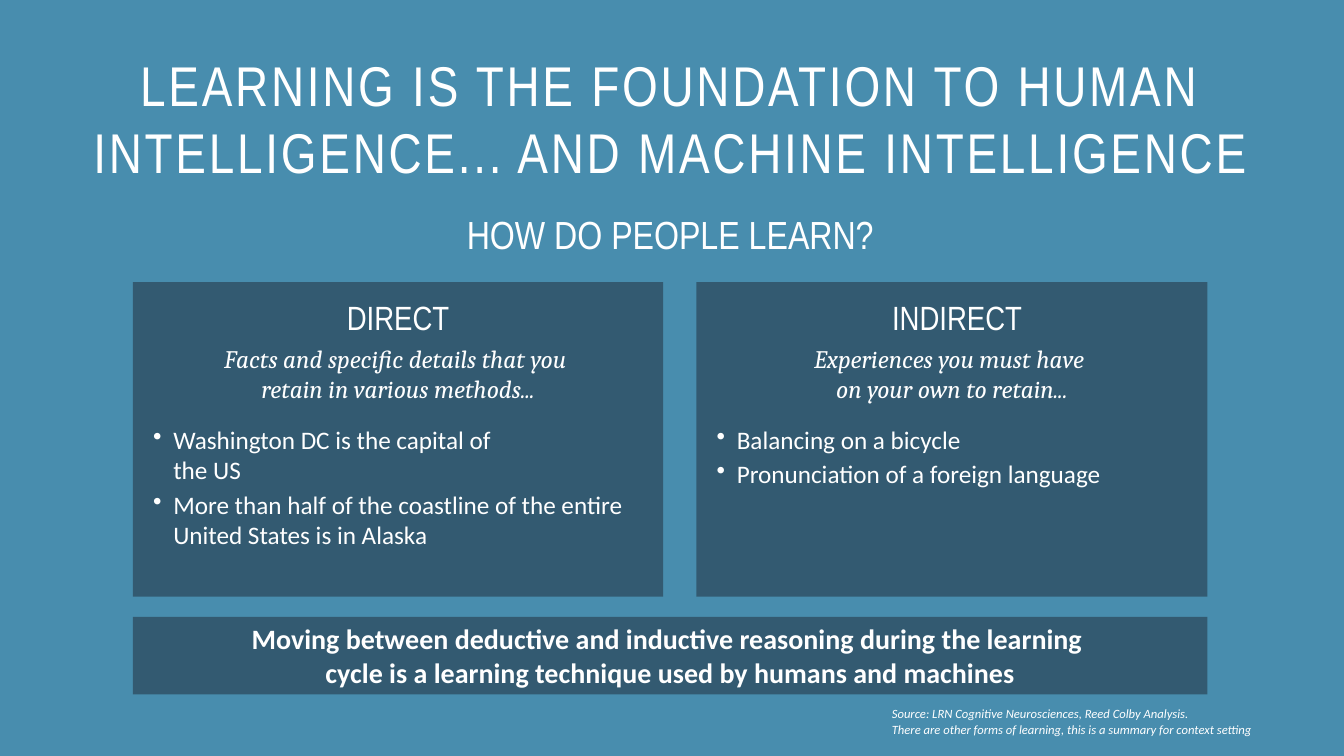
import pptx
import pptx.util
import pptx.dml.color
import pptx.enum.shapes
import pptx.enum.text
import lxml.etree

Pt = pptx.util.Pt
ALIGN = pptx.enum.text.PP_ALIGN
ANCHOR = pptx.enum.text.MSO_ANCHOR

# Content
TITLE = "LEARNING IS THE FOUNDATION TO HUMAN INTELLIGENCE... AND MACHINE INTELLIGENCE"
ASK = "HOW DO PEOPLE LEARN?"
CARDS = [
    dict(left=95, width=378.7, head="DIRECT", head_left=95, head_width=378.7,
         lead="Facts and specific details that you \nretain in various methods...",
         items=["Washington DC is the capital of \nthe US",
                "More than half of the coastline of the entire United States is in Alaska"]),
    dict(left=497.5, width=365, head="INDIRECT", head_left=518.4, head_width=330.5,
         lead="Experiences you must have \non your own to retain...",
         items=["Balancing on a bicycle", "Pronunciation of a foreign language"]),
]
CLAIM = ("Moving between deductive and inductive reasoning during the learning \n"
         "cycle is a learning technique used by humans and machines")
SOURCE = ["Source: LRN Cognitive Neurosciences, Reed Colby Analysis.",
          "There are other forms of learning, this is a summary for context setting"]

THEME = dict(back="488DAE", panel="243646", alpha=58, text="FFFFFF",
             narrow="Arial Narrow", body="Calibri", serif="Cambria",
             title=40, ask=28, head=24, claim=20, text_size=18, note=9)

# Frame
LEFT, WIDE = 95, 767.5
CARD_TOP, CARD_HIGH = 201.6, 224.6


def color(name):
    return pptx.dml.color.RGBColor.from_string(THEME[name])


def write(shape, text, size, font="body", align=ALIGN.LEFT, bold=False, italic=False,
          pad=(7.2, 3.6), anchor=ANCHOR.TOP, before=0, after=0, track=0, bullet=False):
    """Fill a shape with one paragraph per entry of text."""
    frame = shape.text_frame
    frame.word_wrap = True
    frame.auto_size = pptx.enum.text.MSO_AUTO_SIZE.NONE
    frame.vertical_anchor = anchor
    frame.margin_left = frame.margin_right = Pt(pad[0])
    frame.margin_top = frame.margin_bottom = Pt(pad[1])
    lines = [text] if isinstance(text, str) else text
    for index, line in enumerate(lines):
        para = frame.add_paragraph() if index else frame.paragraphs[0]
        para.text = line
        para.alignment = align
        para.space_before, para.space_after = Pt(before), Pt(after)
        for run in para.runs:
            run.font.name, run.font.size = THEME[font], Pt(THEME[size])
            run.font.bold, run.font.italic = bold, italic
            run.font.color.rgb = color("text")
            if track:
                run.font._element.set("spc", str(track * 100))
        if bullet:
            props = para._p.get_or_add_pPr()
            props.set("marL", str(Pt(14.4)))
            props.set("indent", str(-Pt(14.4)))
            mark = lxml.etree.SubElement(props, pptx.oxml.ns.qn("a:buChar"))
            mark.set("char", "•")


def label(slide, box, text, size, **style):
    write(slide.shapes.add_textbox(*map(Pt, box)), text, size, **style)


def panel(slide, box):
    shape = slide.shapes.add_shape(pptx.enum.shapes.MSO_SHAPE.RECTANGLE, *map(Pt, box))
    shape.shadow.inherit = False
    shape.line.fill.background()
    shape.fill.solid()
    shape.fill.fore_color.rgb = color("panel")
    tint = shape._element.spPr.find(".//" + pptx.oxml.ns.qn("a:srgbClr"))
    alpha = lxml.etree.SubElement(tint, pptx.oxml.ns.qn("a:alpha"))
    alpha.set("val", str(THEME["alpha"] * 1000))
    return shape


def main():
    deck = pptx.Presentation()
    deck.slide_width, deck.slide_height = Pt(960), Pt(540)
    slide = deck.slides.add_slide(deck.slide_layouts[5])
    slide.background.fill.solid()
    slide.background.fill.fore_color.rgb = color("back")

    # Title and question
    title = slide.shapes.title
    title.left, title.top, title.width, title.height = map(Pt, (28.8, 36, 900.7, 504))
    write(title, TITLE, "title", font="narrow", align=ALIGN.CENTER, pad=(0, 0),
          before=6, track=2)
    label(slide, (LEFT, 146.9, WIDE, 41), ASK, "ask", font="narrow", align=ALIGN.CENTER)

    # Claim bar
    write(panel(slide, (LEFT, 440.6, WIDE, 55.4)), CLAIM, "claim", bold=True,
          align=ALIGN.CENTER, anchor=ANCHOR.MIDDLE)

    # Cards
    for card in CARDS:
        left, width = card["left"], card["width"]
        panel(slide, (left, CARD_TOP, width, CARD_HIGH))
        label(slide, (left, CARD_TOP + 98, width, 97), card["items"], "text_size",
              pad=(14.4, 3.6), after=3, bullet=True)
        label(slide, (left, CARD_TOP + 40, width, 51), card["lead"], "text_size",
              font="serif", italic=True, align=ALIGN.CENTER)
        label(slide, (card["head_left"], CARD_TOP + 7.2, card["head_width"], 36),
              card["head"], "head", font="narrow", align=ALIGN.CENTER)

    # Source note
    label(slide, (630, 501, 311.8, 29), SOURCE, "note", italic=True)
    deck.save("out.pptx")


if __name__ == "__main__":
    main()
